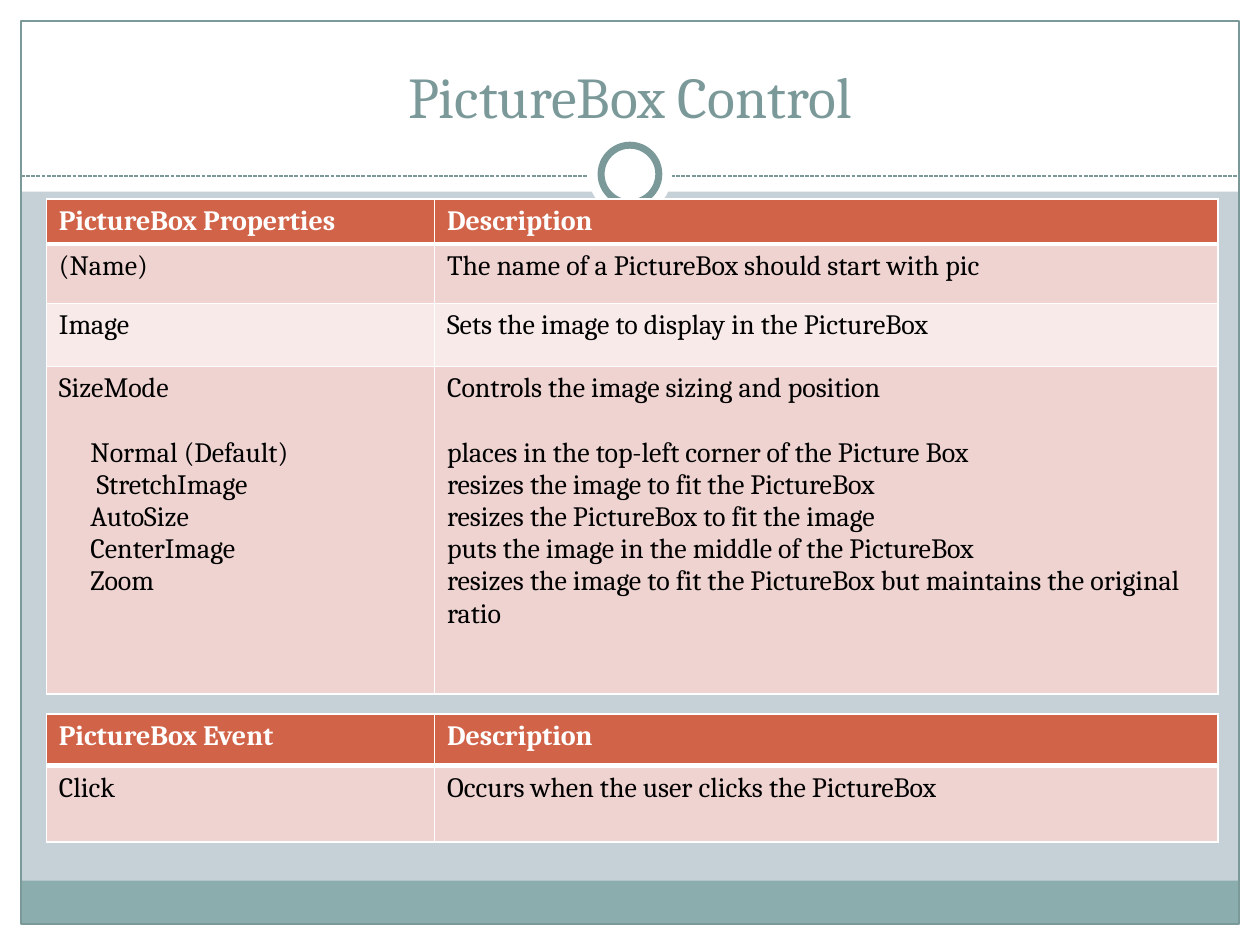
from pptx import Presentation
from pptx.dml.color import RGBColor
from pptx.enum.dml import MSO_LINE
from pptx.enum.shapes import MSO_CONNECTOR, MSO_SHAPE
from pptx.enum.text import MSO_ANCHOR, PP_ALIGN
from pptx.oxml.ns import qn
from pptx.util import Pt
from lxml.etree import SubElement, Element

WIDTH, HEIGHT = 720, 540
MARGIN = 12
WHITE, BLACK, TEAL = "FFFFFF", "000000", "7C999A"
HEADER, BAND_DARK, BAND_LIGHT = "D16349", "EED3D0", "F7EAE9"
LINE_HEIGHT = 18.4


def color(value):
    return RGBColor.from_string(value)


class SlideBuilder:
    font = "Cambria"
    text_size = 16
    title_size = 33

    def __init__(self, presentation):
        self.slide = presentation.slides.add_slide(presentation.slide_layouts[5])

    def background(self, fill):
        self.slide.background.fill.solid()
        self.slide.background.fill.fore_color.rgb = color(fill)

    def shape(self, kind, left, top, width, height, fill=None, line=None, weight=0.75):
        shape = self.slide.shapes.add_shape(kind, Pt(left), Pt(top), Pt(width), Pt(height))
        shape.shadow.inherit = False
        if fill:
            shape.fill.solid()
            shape.fill.fore_color.rgb = color(fill)
        else:
            shape.fill.background()
        if line:
            shape.line.color.rgb = color(line)
            shape.line.width = Pt(weight)
        else:
            shape.line.fill.background()

    def circle(self, center_x, center_y, diameter, **style):
        radius = diameter / 2
        self.shape(MSO_SHAPE.OVAL, center_x - radius, center_y - radius,
                   diameter, diameter, **style)

    def dashed_rule(self, left, right, y):
        rule = self.slide.shapes.add_connector(
            MSO_CONNECTOR.STRAIGHT, Pt(left), Pt(y), Pt(right), Pt(y))
        rule.line.color.rgb = color(TEAL)
        rule.line.width = Pt(0.75)
        rule.line.dash_style = MSO_LINE.SQUARE_DOT
        SubElement(rule._element.spPr, qn("a:effectLst"))

    def style(self, paragraph, size, text_color, bold=False):
        paragraph.font.name = self.font
        paragraph.font.size = Pt(size)
        paragraph.font.bold = bold
        paragraph.font.color.rgb = color(text_color)

    def title(self, text, left, top, width, height):
        title = self.slide.shapes.title
        title.left, title.top, title.width, title.height = map(Pt, (left, top, width, height))
        title.text_frame.text = text
        title.text_frame.vertical_anchor = MSO_ANCHOR.BOTTOM
        paragraph = title.text_frame.paragraphs[0]
        paragraph.alignment = PP_ALIGN.CENTER
        self.style(paragraph, self.title_size, TEAL)
        # Bring the title in front of the white frame
        self.slide.shapes._spTree.append(title._element)

    def borders(self, cell, top, bottom):
        properties = cell._tc.get_or_add_tcPr()
        weights = {"a:lnL": 1, "a:lnR": 1, "a:lnT": top, "a:lnB": bottom}
        for index, (tag, weight) in enumerate(weights.items()):
            line = Element(qn(tag), w=str(Pt(weight)))
            fill = SubElement(line, qn("a:solidFill"))
            SubElement(fill, qn("a:srgbClr"), val=WHITE)
            properties.insert(index, line)

    def cell(self, cell, lines, row, indents):
        is_header = row == 0
        cell.fill.solid()
        cell.fill.fore_color.rgb = color(
            HEADER if is_header else BAND_DARK if row % 2 else BAND_LIGHT)
        self.borders(cell, top=3 if row == 1 else 1, bottom=3 if is_header else 1)
        cell.text = "\n".join(lines)
        for index, paragraph in enumerate(cell.text_frame.paragraphs):
            self.style(paragraph, self.text_size, WHITE if is_header else BLACK, is_header)
            if index == 1:  # one open line below the lead line
                paragraph.space_before = Pt(LINE_HEIGHT)
            indent = indents.get(lines[index])
            if indent:
                paragraph._p.get_or_add_pPr().set("marL", str(Pt(indent)))

    def table(self, left, top, columns, heights, rows, indents):
        table = self.slide.shapes.add_table(
            len(rows), len(columns), Pt(left), Pt(top),
            Pt(sum(columns)), Pt(sum(heights))).table
        for column, width in zip(table.columns, columns):
            column.width = Pt(width)
        for row, (values, height) in enumerate(zip(rows, heights)):
            table.rows[row].height = Pt(height)
            for column, lines in enumerate(values):
                self.cell(table.cell(row, column), lines, row, indents)


SIZE_MODES = {
    "Normal (Default)": 18,
    "StretchImage": 21.5,
    "AutoSize": 18,
    "CenterImage": 18,
    "Zoom": 18,
}
PROPERTIES = [
    (["PictureBox Properties"], ["Description"]),
    (["(Name)"], ["The name of a PictureBox should start with pic"]),
    (["Image"], ["Sets the image to display in the PictureBox"]),
    (["SizeMode", *SIZE_MODES], [
        "Controls the image sizing and position",
        "places in the top-left corner of the Picture Box",
        "resizes the image to fit the PictureBox",
        "resizes the PictureBox to fit the image",
        "puts the image in the middle of the PictureBox",
        "resizes the image to fit the PictureBox but maintains the original ratio",
    ]),
]
EVENTS = [
    (["PictureBox Event"], ["Description"]),
    (["Click"], ["Occurs when the user clicks the PictureBox"]),
]


def main():
    presentation = Presentation()
    presentation.slide_width, presentation.slide_height = Pt(WIDTH), Pt(HEIGHT)
    builder = SlideBuilder(presentation)
    builder.background("C5D1D7")

    # White margins and title band
    for box in [(0, HEIGHT - MARGIN, WIDTH, MARGIN), (0, 0, WIDTH, 109.5),
                (0, 0, MARGIN, HEIGHT), (WIDTH - MARGIN, 0, MARGIN, HEIGHT)]:
        builder.shape(MSO_SHAPE.RECTANGLE, *box, fill=WHITE)

    # Footer band, frame and divider
    inner_width = WIDTH - 2 * MARGIN
    builder.shape(MSO_SHAPE.RECTANGLE, MARGIN, 503.3, inner_width, 24.5, fill="8CADAE")
    builder.shape(MSO_SHAPE.RECTANGLE, MARGIN, MARGIN, inner_width,
                  HEIGHT - 2 * MARGIN, line=TEAL)
    builder.dashed_rule(MARGIN, WIDTH - MARGIN, 100.6)

    # Ring on the divider
    builder.circle(WIDTH / 2, 99.5, 48, fill=WHITE)
    builder.circle(WIDTH / 2, 99.5, 33, fill=WHITE, line=TEAL, weight=4)

    builder.title("PictureBox Control", 24, 18, 672, 60)

    # Property and event tables
    columns = [221.8, 447.8]
    builder.table(26.5, 113.8, columns, [25.4, 34, 36, 187.2], PROPERTIES, SIZE_MODES)
    builder.table(26.5, 408, columns, [29.5, 43.7], EVENTS, SIZE_MODES)

    presentation.save("out.pptx")


if __name__ == "__main__":
    main()
